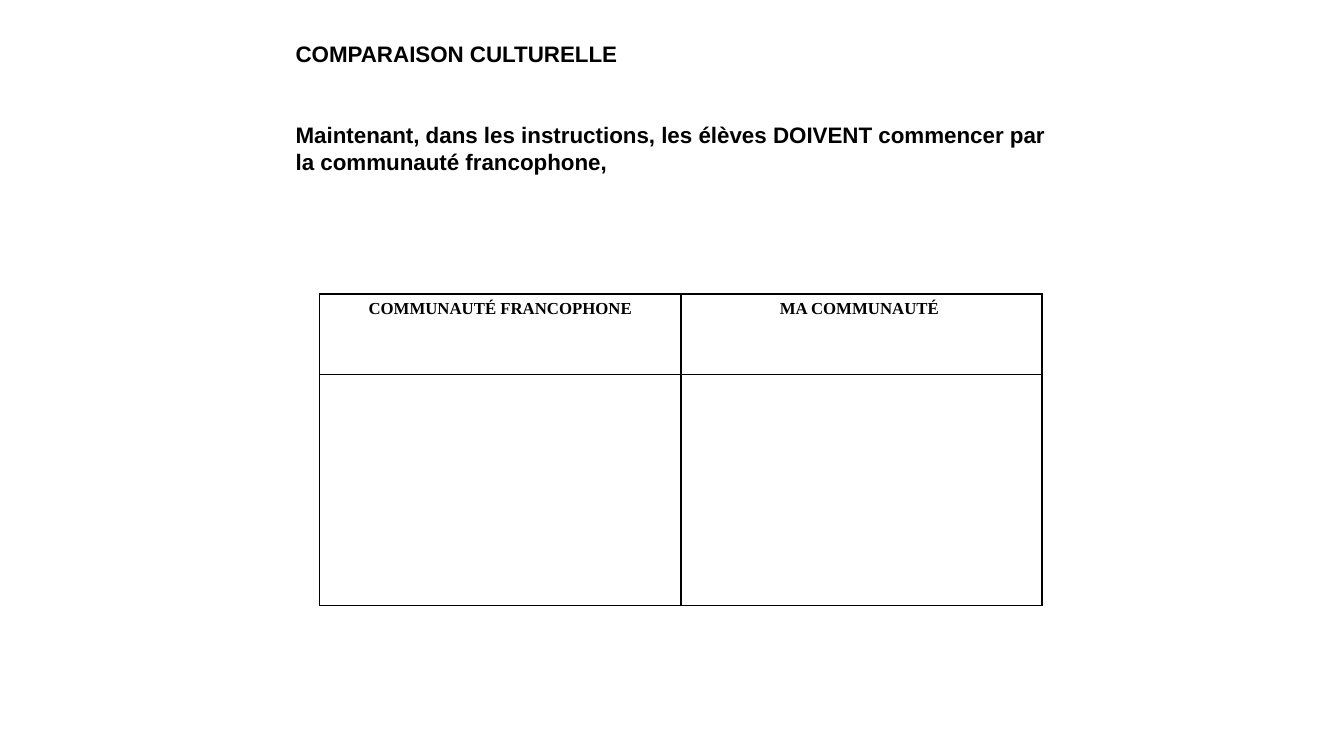
import pptx
import pptx.dml.color
import pptx.enum.text
import pptx.oxml
import pptx.oxml.ns
import pptx.util
from pptx.util import Cm

HUES = {"ink": "000000", "page": "FFFFFF"}
TITLE = {"name": "Arial", "size": pptx.util.Pt(16), "bold": True}
HEAD = {"name": "Times New Roman", "size": pptx.util.Pt(12), "bold": True}
LINES = [
    "COMPARAISON CULTURELLE",
    "Maintenant, dans les instructions, les élèves DOIVENT commencer par la communauté francophone,",
]
HEADS = ["COMMUNAUTÉ FRANCOPHONE", "MA COMMUNAUTÉ "]
PITCH = 19.3


def shade(name):
    return pptx.dml.color.RGBColor.from_string(HUES[name])


def apply(item, form):
    for key, value in form.items():
        setattr(item, key, value)


def write(para, text, form):
    run = para.add_run()
    run.text = text
    apply(run.font, form)
    run.font.color.rgb = shade("ink")


def add_text(slide, lines):
    frame = slide.shapes.add_textbox(Cm(7.2), Cm(0.84), Cm(19.9), Cm(5.25)).text_frame
    apply(frame, {
        "word_wrap": True,
        "vertical_anchor": pptx.enum.text.MSO_ANCHOR.TOP,
        "margin_top": Cm(0.16),
    })
    for index, line in enumerate(lines):
        para = frame.add_paragraph() if index else frame.paragraphs[0]
        para.line_spacing = pptx.util.Pt(PITCH)
        para.space_before = pptx.util.Pt(2 * PITCH if index else 0)
        write(para, line, TITLE)


def frame_cell(cell):
    props = cell._tc.get_or_add_tcPr()
    for side in "LRTB":
        props.append(pptx.oxml.parse_xml(
            f'<a:ln{side} {pptx.oxml.ns.nsdecls("a")} w="12700"><a:solidFill>'
            f'<a:srgbClr val="{HUES["ink"]}"/></a:solidFill></a:ln{side}>'
        ))
    cell.fill.solid()
    cell.fill.fore_color.rgb = shade("page")


def add_grid(slide, heads):
    high = [Cm(2.03), Cm(5.81)]
    wide = Cm(9.1)
    table = slide.shapes.add_table(
        len(high), len(heads), Cm(8.06), Cm(7.41), wide * len(heads), sum(high)
    ).table
    apply(table, {"first_row": False, "horz_banding": False})
    for row, size in zip(table.rows, high):
        row.height = size
    for cell in table.iter_cells():
        frame_cell(cell)
    for index, head in enumerate(heads):
        para = table.cell(0, index).text_frame.paragraphs[0]
        para.alignment = pptx.enum.text.PP_ALIGN.CENTER
        write(para, head, HEAD)


def main():
    deck = pptx.Presentation()
    apply(deck, {"slide_width": Cm(33.87), "slide_height": Cm(19.05)})
    slide = deck.slides.add_slide(deck.slide_layouts[6])
    add_text(slide, LINES)
    add_grid(slide, HEADS)
    deck.save("out.pptx")


if __name__ == "__main__":
    main()
